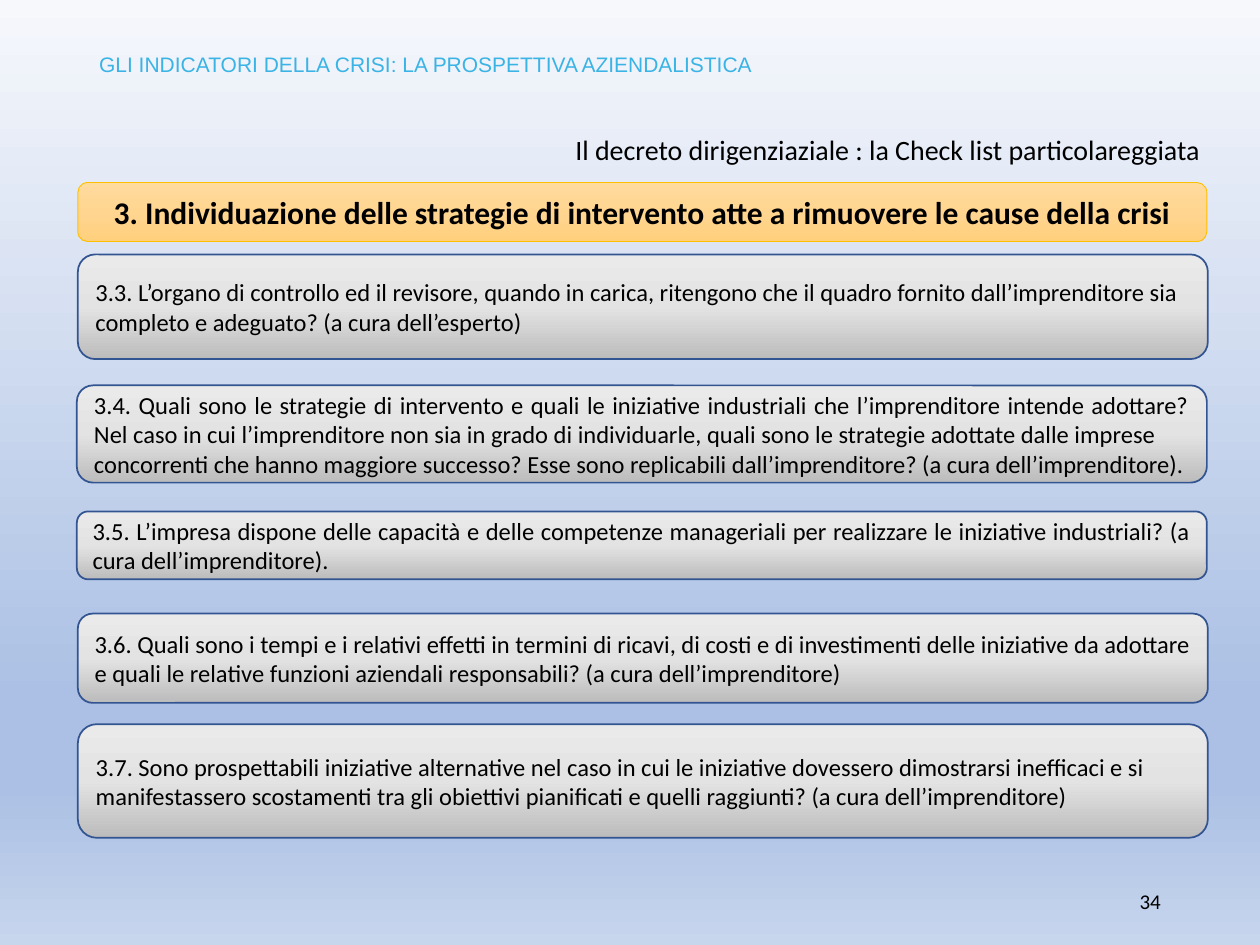
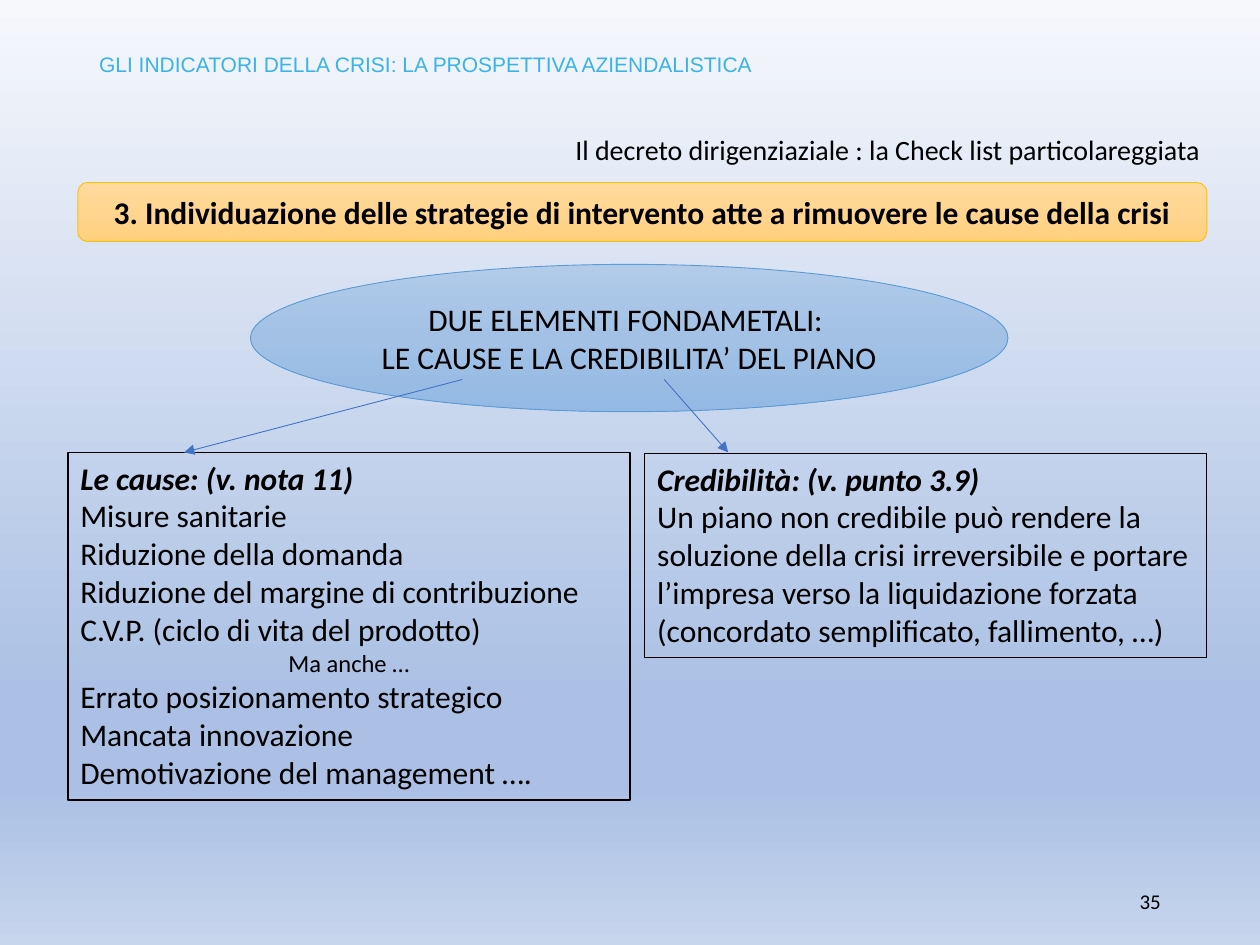
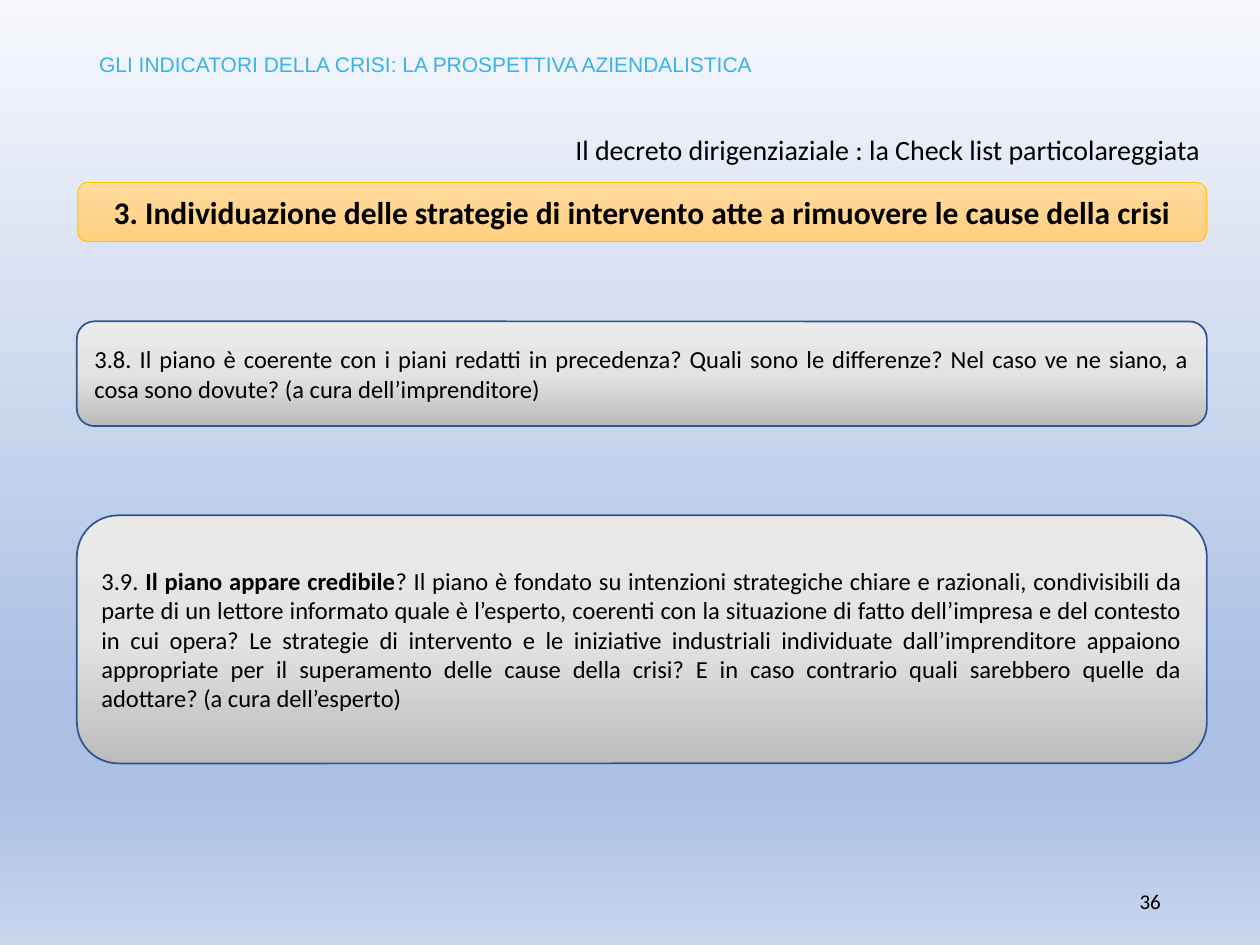
import collections
import dataclasses

import lxml.etree
import pptx
import pptx.dml.color
import pptx.enum.shapes
import pptx.enum.text
import pptx.oxml.ns
import pptx.util

Cm = pptx.util.Cm
Pt = pptx.util.Pt
qn = pptx.oxml.ns.qn
Kind = pptx.enum.shapes.MSO_SHAPE
Align = pptx.enum.text.PP_ALIGN
Anchor = pptx.enum.text.MSO_ANCHOR
Box = collections.namedtuple("Box", "left top width height")
Run = collections.namedtuple("Run", "text bold slant", defaults=(False, False))


@dataclasses.dataclass(frozen=True)
class Theme:
    """Colours, fonts and type sizes of the deck."""
    font: str = "Calibri"
    head: str = "Arial"
    ink: str = "000000"
    sky: str = "3AB3E5"
    gold: str = "FFC000"
    navy: str = "325491"
    azure: str = "5B9BD5"
    arrow: str = "4472C4"
    page: tuple = ((0, "F6F8FC"), (74, "ABC0E4"), (83, "ABC0E4"), (100, "C7D5ED"))
    amber: tuple = ((0, "FFDB9E"), (50, "FFD590"), (100, "FFD07C"))
    grey: tuple = ((0, "EBEAEA"), (50, "E4E3E3"), (100, "BDBCBC"))
    blue: tuple = ((0, "B1CBE9"), (50, "A3C1E5"), (100, "93B9E4"))
    small: int = 12
    body: int = 14
    title: int = 16
    large: int = 18


@dataclasses.dataclass(frozen=True)
class Para:
    """One paragraph: its runs, alignment, size and line spacing."""
    runs: tuple
    align: Align = Align.LEFT
    size: int = Theme.large
    space: float = 1.0


THEME = Theme()
SLIDE = Box(0, 0, 25.4, 19.05)
BANNER = Box(1.57, 3.68, 22.76, 1.19)
FIRST = 34


def plain(text, **style):
    """Return a paragraph with a single regular run."""
    return Para((Run(text),), **style)


def tint(text):
    """Return the colour for a hex string."""
    return pptx.dml.color.RGBColor.from_string(text)


def place(box):
    """Return the lengths of a box."""
    return [Cm(side) for side in box]


def inner(box, left, top, width, height):
    """Return a box given relative to the corner of another."""
    return Box(box.left + left, box.top + top, width, height)


def shade(fill, root, stops):
    """Give a fill a vertical gradient with any number of stops."""
    fill.gradient()
    fill.gradient_angle = 270
    group = next(root.iter(qn("a:gsLst")))
    for old in list(group):
        group.remove(old)
    for point, hue in stops:
        stop = lxml.etree.SubElement(group, qn("a:gs"), pos=str(point * 1000))
        lxml.etree.SubElement(stop, qn("a:srgbClr"), val=hue)


def write(shape, paras, anchor=Anchor.TOP, font=THEME.font, ink=THEME.ink, grow=False):
    """Fill a shape with paragraphs, run by run."""
    frame = shape.text_frame
    frame.word_wrap = True
    frame.vertical_anchor = anchor
    if grow:
        frame.auto_size = pptx.enum.text.MSO_AUTO_SIZE.SHAPE_TO_FIT_TEXT
    for index, para in enumerate(paras):
        line = frame.add_paragraph() if index else frame.paragraphs[0]
        line.alignment = para.align
        line.line_spacing = para.space
        for part in para.runs:
            run = line.add_run()
            run.text = part.text
            run.font.name = font
            run.font.size = Pt(para.size)
            run.font.bold = part.bold
            run.font.italic = part.slant
            run.font.color.rgb = tint(ink)


def label(slide, box, para, **style):
    """Add a text box with one paragraph."""
    write(slide.shapes.add_textbox(*place(box)), [para], **style)


def panel(slide, kind, box, paras, edge, weight, stops=None, **style):
    """Add an outlined shape with text and an optional gradient."""
    shape = slide.shapes.add_shape(kind, *place(box))
    shape.shadow.inherit = False
    if stops:
        shade(shape.fill, shape.element, stops)
    else:
        shape.fill.background()
    shape.line.color.rgb = tint(edge)
    shape.line.width = Pt(weight)
    write(shape, paras, **style)


def arrow(slide, box, start, end):
    """Draw an arrow between two points relative to a box."""
    ends = [Cm(box[axis] + point[axis]) for point in (start, end) for axis in (0, 1)]
    line = slide.shapes.add_connector(pptx.enum.shapes.MSO_CONNECTOR.STRAIGHT, *ends)
    line.line.color.rgb = tint(THEME.arrow)
    line.line.width = Pt(0.5)
    stroke = line.line._get_or_add_ln()
    lxml.etree.SubElement(stroke, qn("a:tailEnd"), type="triangle")
    lxml.etree.SubElement(line.element.spPr, qn("a:effectLst"))


def frame(slide, box, number):
    """Set the background, header, title, banner and page number."""
    shade(slide.background.fill, slide.element, THEME.page)
    label(slide, inner(box, 17.93, 17.65, 5.72, 1.02),
          plain(str(number), align=Align.RIGHT, size=THEME.small), anchor=Anchor.MIDDLE)
    label(slide, inner(box, 1.75, 0.91, 17.73, 0.76),
          plain("GLI INDICATORI DELLA CRISI: LA PROSPETTIVA AZIENDALISTICA", size=THEME.small),
          font=THEME.head, ink=THEME.sky, grow=True)
    label(slide, inner(box, 11.35, 2.36, 13.18, 1.12),
          plain("Il decreto dirigenziaziale : la Check list particolareggiata",
                size=THEME.title, space=0.9), anchor=Anchor.BOTTOM)
    text = "3. Individuazione delle strategie di intervento atte a rimuovere le cause della crisi"
    panel(slide, Kind.ROUNDED_RECTANGLE, inner(box, *BANNER),
          [Para((Run(text, True),), Align.CENTER)],
          THEME.gold, 0.5, THEME.amber, anchor=Anchor.MIDDLE)


def cards(slide, box, items):
    """Stack grey question cards at their offsets in a box."""
    for left, top, height, lines in items:
        paras = [Para(runs, Align.JUSTIFY, THEME.body) for runs in lines]
        panel(slide, Kind.ROUNDED_RECTANGLE, inner(box, left, top, box.width, height),
              paras, THEME.navy, 1, THEME.grey, anchor=Anchor.MIDDLE)


def causes(slide, box):
    """Draw the oval and the two boxes it points to."""
    panel(slide, Kind.OVAL, inner(box, 3.68, 0, 15.27, 2.97),
          [plain("DUE ELEMENTI FONDAMETALI: ", align=Align.CENTER),
           plain("LE CAUSE E LA CREDIBILITA’ DEL PIANO", align=Align.CENTER)],
          THEME.azure, 0.5, THEME.blue, anchor=Anchor.MIDDLE)
    for left, top, height, head, paras in LISTS:
        lead = Para((Run(head, True, True),))
        panel(slide, Kind.RECTANGLE, inner(box, left, top, 11.33, height),
              [lead, *paras], THEME.ink, 0.75, grow=True)
    for start, end in ((7.95, 2.34), (12.02, 13.31)):
        arrow(slide, box, (start, 2.32), (end, 3.79))


LISTS = (
    (0, 3.79, 7.01, "Le cause: (v. nota 11)", (
        plain("Misure sanitarie"),
        plain("Riduzione della domanda"),
        plain("Riduzione del margine di contribuzione"),
        plain("C.V.P. (ciclo di vita del prodotto)"),
        plain("Ma anche …", align=Align.CENTER, size=THEME.body),
        plain("Errato posizionamento strategico"),
        plain("Mancata innovazione"),
        plain("Demotivazione del management …."))),
    (11.63, 3.81, 4.11, "Credibilità: (v. punto 3.9)", (
        plain("Un piano non credibile può rendere la soluzione della crisi irreversibile "
              "e portare l’impresa verso la liquidazione forzata"),
        plain("(concordato semplificato, fallimento, …)"))),
)

ASKS = (
    (0.02, 0, 2.11, (
        (Run("3.3. L’organo di controllo ed il revisore, quando in carica, ritengono che "
             "il quadro fornito dall’imprenditore sia"),),
        (Run("completo e adeguato? (a cura dell’esperto)"),))),
    (0, 2.64, 1.96, (
        (Run("3.4. Quali sono le strategie di intervento e quali le iniziative industriali "
             "che l’imprenditore intende adottare? Nel caso in cui l’imprenditore non sia in "
             "grado di individuarle, quali sono le strategie adottate dalle imprese"),),
        (Run("concorrenti che hanno maggiore successo? Esse sono replicabili "
             "dall’imprenditore? (a cura dell’imprenditore)."),))),
    (0, 5.18, 1.37, (
        (Run("3.5. L’impresa dispone delle capacità e delle competenze manageriali per "
             "realizzare le iniziative industriali? (a cura dell’imprenditore)."),),)),
    (0.02, 7.24, 1.8, (
        (Run("3.6. Quali sono i tempi e i relativi effetti in termini di ricavi, di costi e "
             "di investimenti delle iniziative da adottare e quali le relative funzioni "
             "aziendali responsabili? (a cura dell’imprenditore)"),),)),
    (0.02, 9.47, 2.29, (
        (Run("3.7. Sono prospettabili iniziative alternative nel caso in cui le iniziative "
             "dovessero dimostrarsi inefficaci e si"),),
        (Run("manifestassero scostamenti tra gli obiettivi pianificati e quelli raggiunti? "
             "(a cura dell’imprenditore)"),))),
)

CHECKS = (
    (0, 0, 2.11, (
        (Run("3.8. Il piano è coerente con i piani redatti in precedenza? Quali sono le "
             "differenze? Nel caso ve ne siano, a cosa sono dovute? "
             "(a cura dell’imprenditore)"),),)),
    (0, 3.91, 5, (
        (Run("3.9. "),
         Run("Il piano appare credibile", True),
         Run("? Il piano è fondato su intenzioni strategiche chiare e razionali, "
             "condivisibili da parte di un lettore informato quale è l’esperto, coerenti "
             "con la situazione di fatto dell’impresa e del contesto in cui opera? Le "
             "strategie di intervento e le iniziative industriali individuate "
             "dall’imprenditore appaiono appropriate per il superamento delle cause della "
             "crisi? E in caso contrario quali sarebbero quelle da adottare? "
             "(a cura dell’esperto)")),)),
)


def main():
    """Build and save the deck."""
    deck = pptx.Presentation()
    deck.slide_width, deck.slide_height = Cm(SLIDE.width), Cm(SLIDE.height)
    slides = [deck.slides.add_slide(deck.slide_layouts[6]) for _ in range(3)]
    for number, slide in enumerate(slides, FIRST):
        frame(slide, SLIDE, number)
    cards(slides[0], Box(1.55, 5.13, 22.78, 11.76), ASKS)
    causes(slides[1], Box(1.37, 5.33, 22.96, 10.8))
    cards(slides[2], Box(1.55, 6.48, 22.78, 8.91), CHECKS)
    deck.save("out.pptx")


if __name__ == "__main__":
    main()
